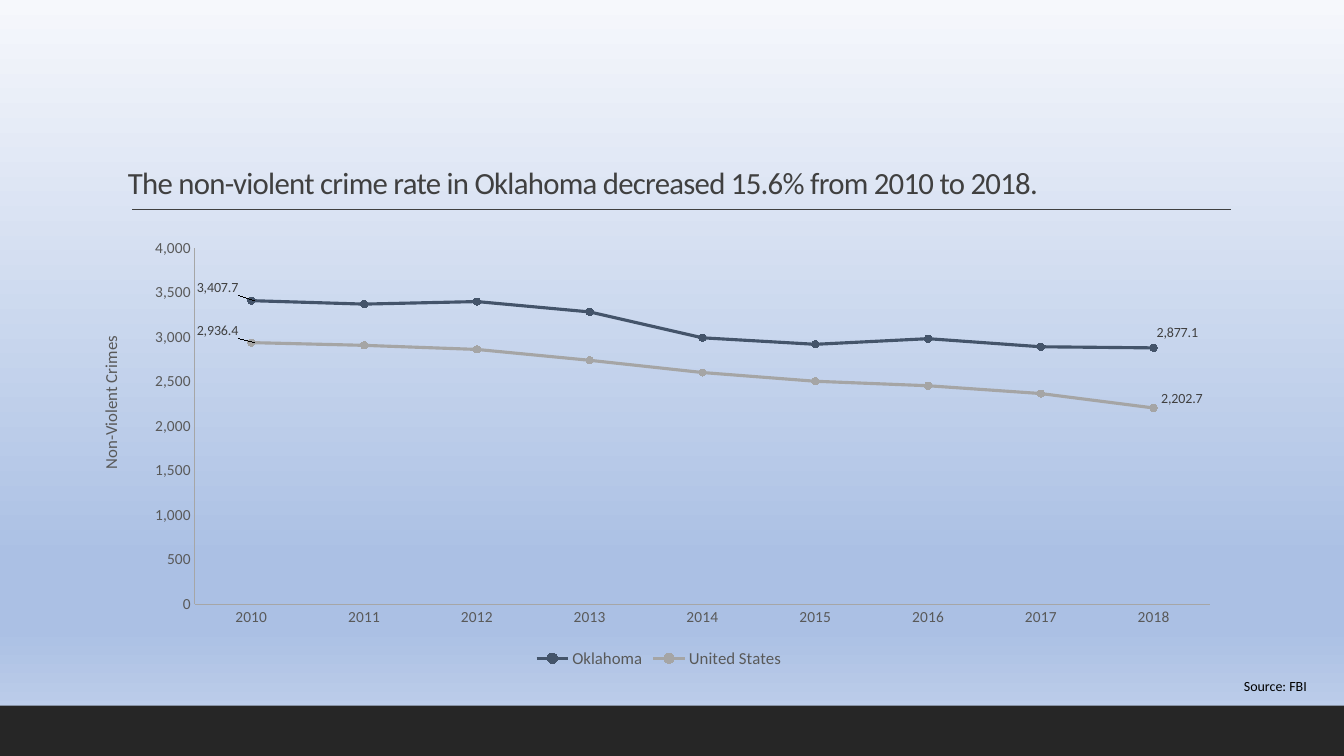
from lxml.etree import SubElement
from pptx import Presentation
from pptx.chart.data import CategoryChartData
from pptx.dml.color import RGBColor
from pptx.enum.chart import XL_CHART_TYPE, XL_LEGEND_POSITION, XL_LABEL_POSITION, XL_MARKER_STYLE, XL_TICK_MARK
from pptx.enum.shapes import MSO_CONNECTOR, MSO_SHAPE
from pptx.enum.text import MSO_ANCHOR, PP_ALIGN
from pptx.oxml import parse_xml
from pptx.oxml.ns import nsdecls, qn
from pptx.util import Inches, Pt

COLORS = {
    "ink": "404040", "axis_text": "595959", "axis_line": "A6A6A6", "footer": "262626",
    "black": "000000", "oklahoma": "44546A", "nation": "A5A5A5",
}
SKY = [(0, "F6F8FC"), (74, "ABC0E4"), (83, "ABC0E4"), (100, "C7D5ED")]
YEARS = [str(year) for year in range(2010, 2019)]
CRIME_RATES = [
    ("Oklahoma", "oklahoma",
     [3407.7, 3368.7, 3397.5, 3280.8, 2990.6, 2917.4, 2980.8, 2889.9, 2877.1],
     {0: (-0.054, -0.03), 8: (-0.004, -0.034)}),
    ("United States", "nation",
     [2936.4, 2905.6, 2860, 2737.6, 2600.6, 2502.6, 2452.2, 2364.1, 2202.7],
     {0: (-0.054, -0.027), 8: (0, -0.02)}),
]
LEADER_LINES = (
    '<c:extLst %s><c:ext uri="{CE6537A1-D6FC-4f65-9D91-7224C49458BB}" '
    'xmlns:c15="http://schemas.microsoft.com/office/drawing/2012/chart">'
    '<c15:showLeaderLines val="1"/></c:ext></c:extLst>' % nsdecls("c")
)


def rgb(name):
    return RGBColor.from_string(COLORS[name])


def format_font(font, size, color, face="Calibri"):
    font.name, font.size, font.bold = face, Pt(size), False
    font.color.rgb = rgb(color)


def write(frame, text, size=10, color="black", align=PP_ALIGN.LEFT, line_spacing=None, tracking=None):
    paragraph = frame.paragraphs[0]
    paragraph.alignment = align
    paragraph.line_spacing = line_spacing
    run = paragraph.add_run()
    run.text = text
    format_font(run.font, size, color)
    if tracking is not None:
        run.font._element.set("spc", str(round(tracking * 100)))


def manual_layout(**settings):
    layout = parse_xml("<c:layout %s><c:manualLayout/></c:layout>" % nsdecls("c"))
    for tag, value in settings.items():
        SubElement(layout[0], qn("c:" + tag)).set("val", str(value))
    return layout


class CrimeSlide:
    def __init__(self, slide):
        self.slide = slide
        self.shapes = slide.shapes

    def background(self, stops):
        fill = self.slide.background.fill
        fill.gradient()
        fill.gradient_angle = 270
        stop_list = fill._fill._gradFill.find(qn("a:gsLst"))
        for old_stop in list(stop_list):
            stop_list.remove(old_stop)
        for percent, color in stops:
            stop = SubElement(stop_list, qn("a:gs"), pos=str(percent * 1000))
            SubElement(stop, qn("a:srgbClr"), val=color)

    def band(self, left, top, width, height, color):
        footer = self.shapes.add_shape(
            MSO_SHAPE.RECTANGLE, Inches(left), Inches(top), Inches(width), Inches(height))
        footer.shadow.inherit = False
        footer.fill.solid()
        footer.fill.fore_color.rgb = rgb(color)
        footer.line.fill.background()

    def rule(self, left, right, y, color, weight):
        underline = self.shapes.add_connector(
            MSO_CONNECTOR.STRAIGHT, Inches(left), Inches(y), Inches(right), Inches(y))
        underline.line.color.rgb = rgb(color)
        underline.line.width = Pt(weight)
        SubElement(underline._element.spPr, qn("a:effectLst"))

    def text(self, left, top, width, height, text, anchor=MSO_ANCHOR.TOP, **style):
        frame = self.shapes.add_textbox(
            Inches(left), Inches(top), Inches(width), Inches(height)).text_frame
        frame.word_wrap = True
        frame.vertical_anchor = anchor
        write(frame, text, **style)

    def axis(self, axis):
        axis.has_major_gridlines = False
        axis.major_tick_mark = axis.minor_tick_mark = XL_TICK_MARK.NONE
        format_font(axis.tick_labels.font, 11, "axis_text")
        axis.format.line.color.rgb = rgb("axis_line")
        axis.format.line.width = Pt(0.75)

    def trend(self, series, color, label_shifts):
        series.smooth = False
        series.format.line.color.rgb = rgb(color)
        series.format.line.width = Pt(2.25)
        series.marker.style = XL_MARKER_STYLE.CIRCLE
        series.marker.size = 5
        series.marker.format.fill.solid()
        series.marker.format.fill.fore_color.rgb = rgb(color)
        series.marker.format.line.color.rgb = rgb(color)
        labels = series.data_labels
        labels.show_value = False
        for index, (x, y) in label_shifts.items():
            label = series.points[index].data_label
            format_font(label.font, 10, "ink")
            label.position = XL_LABEL_POSITION.RIGHT
            label._dLbl.find(qn("c:idx")).addnext(manual_layout(x=x, y=y))
        labels._element.append(parse_xml(LEADER_LINES))

    def line_chart(self, left, top, width, height, years, rates, axis_title):
        data = CategoryChartData(number_format="#,##0.0")
        data.categories = years
        for name, _, values, _ in rates:
            data.add_series(name, values)
        chart = self.shapes.add_chart(
            XL_CHART_TYPE.LINE_MARKERS, Inches(left), Inches(top),
            Inches(width), Inches(height), data).chart
        chart.has_title = False
        format_font(chart.font, 10, "black")
        chart.plots[0].vary_by_categories = False

        self.axis(chart.category_axis)
        crimes = chart.value_axis
        self.axis(crimes)
        crimes.minimum_scale, crimes.maximum_scale, crimes.major_unit = 0, 4000, 500
        crimes.tick_labels.number_format = "#,##0"
        crimes.tick_labels.number_format_is_linked = False
        write(crimes.axis_title.text_frame, axis_title, size=12, color="axis_text",
              align=PP_ALIGN.CENTER)
        title = crimes.axis_title._element
        for layout in title.findall(qn("c:layout")):
            title.remove(layout)
        title.find(qn("c:tx")).addnext(manual_layout(xMode="edge", yMode="edge", x=0.01, y=0.233))

        chart.has_legend = True
        chart.legend.position = XL_LEGEND_POSITION.BOTTOM
        chart.legend.include_in_layout = False
        format_font(chart.legend.font, 12, "axis_text")

        for series, (_, color, _, shifts) in zip(chart.plots[0].series, rates):
            self.trend(series, color, shifts)

        plot_area = chart._chartSpace.chart.plotArea
        for layout in plot_area.findall(qn("c:layout")):
            plot_area.remove(layout)
        plot_area.insert(0, manual_layout(
            layoutTarget="inner", xMode="edge", yMode="edge", x=0.096, y=0.041, w=0.884, h=0.805))


def main():
    deck = Presentation()
    deck.slide_width, deck.slide_height = Inches(13.33), Inches(7.5)
    page = CrimeSlide(deck.slides.add_slide(deck.slide_layouts[6]))
    page.background(SKY)
    page.band(0, 7, 13.33, 0.5, "footer")
    page.rule(1.31, 12.21, 2.08, "ink", 1)
    page.text(1.17, 1.35, 11.48, 0.7,
              "The non-violent crime rate in Oklahoma decreased 15.6% from 2010 to 2018.",
              anchor=MSO_ANCHOR.BOTTOM, size=22, color="ink", line_spacing=0.9, tracking=-0.5)
    page.line_chart(0.84, 2.28, 11.39, 4.39, YEARS, CRIME_RATES, "Non-Violent Crimes")
    page.text(11.69, 6.67, 1.37, 0.27, "Source: FBI", align=PP_ALIGN.RIGHT)
    deck.save("out.pptx")


if __name__ == "__main__":
    main()
